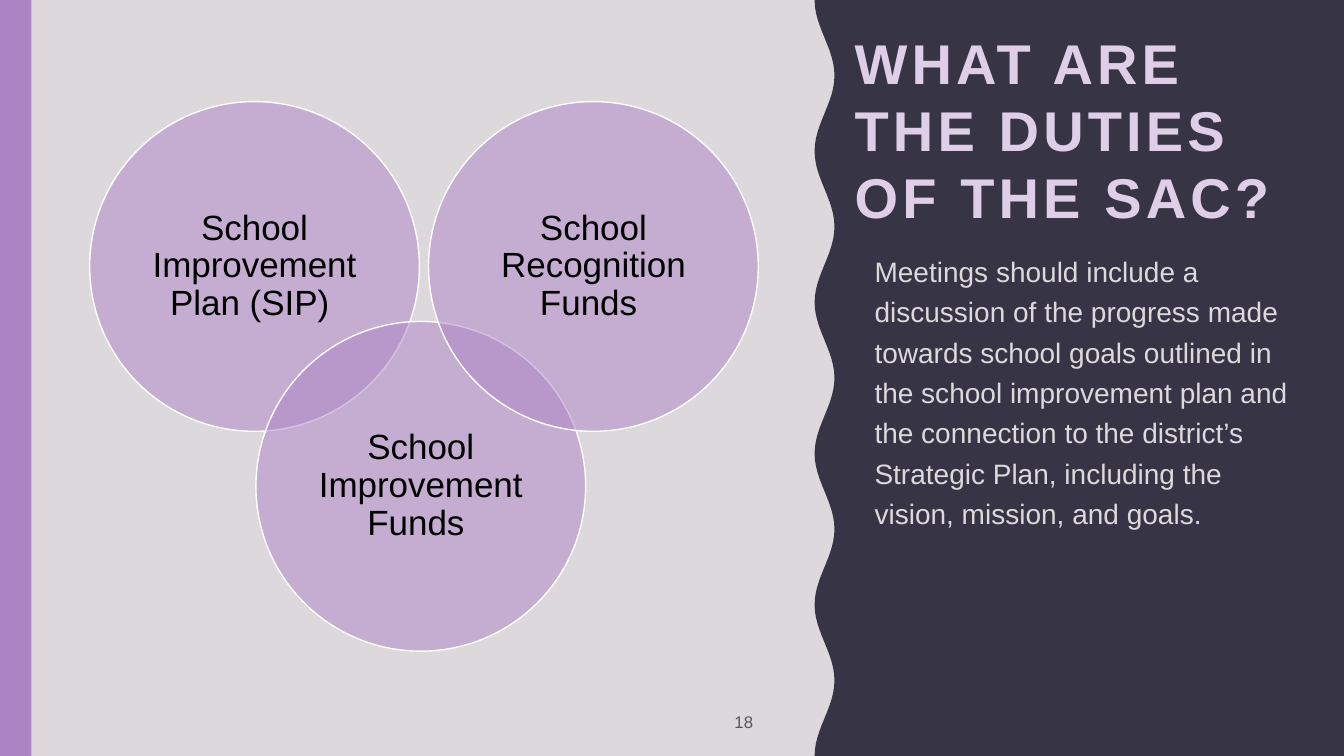
from math import cos, pi

from lxml import etree
from pptx import Presentation
from pptx.dml.color import RGBColor
from pptx.enum.shapes import MSO_SHAPE
from pptx.enum.text import MSO_ANCHOR, PP_ALIGN
from pptx.oxml.ns import qn
from pptx.util import Cm, Pt

RECT, OVAL = MSO_SHAPE.RECTANGLE, MSO_SHAPE.OVAL
TOP, MID, LOW = MSO_ANCHOR.TOP, MSO_ANCHOR.MIDDLE, MSO_ANCHOR.BOTTOM
LEFT, MIDST, RIGHT = PP_ALIGN.LEFT, PP_ALIGN.CENTER, PP_ALIGN.RIGHT

WIDE, HIGH = 33.87, 19.05
PALE, DARK, LILAC, WHITE = "DCD8DC", "373545", "AD84C6", "FFFFFF"


def tint(code):
    return RGBColor.from_string(code)


class Deck:
    font = "Arial"

    def __init__(self):
        self.show = Presentation()
        self.show.slide_width, self.show.slide_height = Cm(WIDE), Cm(HIGH)
        self.slide = self.show.slides.add_slide(self.show.slide_layouts[6])
        fill = self.slide.background.fill
        fill.solid()
        fill.fore_color.rgb = tint(PALE)

    def paint(self, shape, color, alpha=100, edge=None):
        shape.shadow.inherit = False
        shape.fill.solid()
        shape.fill.fore_color.rgb = tint(color)
        if alpha < 100:
            node = shape.fill._xPr.find(".//" + qn("a:srgbClr"))
            etree.SubElement(node, qn("a:alpha"), val=str(alpha * 1000))
        if edge:
            shape.line.color.rgb = tint(edge)
            shape.line.width = Pt(1)
        else:
            shape.line.fill.background()

    def shape(self, kind, x, y, w, h, color, **look):
        item = self.slide.shapes.add_shape(kind, Cm(x), Cm(y), Cm(w), Cm(h))
        self.paint(item, color, **look)

    def wave(self, mid, swing, period, color):
        """Fill the slide from a wavy left edge to its right side."""
        steps = 120
        edge = []
        for i in range(steps + 1):
            y = HIGH * (1 - i / steps)
            x = mid - swing * cos(2 * pi * y / period)
            edge.append((Cm(x), Cm(y)))
        path = self.slide.shapes.build_freeform(Cm(WIDE), Cm(0))
        path.add_line_segments([(Cm(WIDE), Cm(HIGH))] + edge, close=True)
        self.paint(path.convert_to_shape(), color)

    def text(self, x, y, w, h, words, size, color, align=LEFT, anchor=TOP,
             bold=False, track=0, lines=1.0, before=0, after=0, inset=None):
        box = self.slide.shapes.add_textbox(Cm(x), Cm(y), Cm(w), Cm(h))
        frame = box.text_frame
        frame.word_wrap = True
        frame.vertical_anchor = anchor
        if inset is not None:
            frame.margin_top = frame.margin_bottom = Cm(inset)
            frame.margin_left = frame.margin_right = Cm(inset)
        para = frame.paragraphs[0]
        para.alignment, para.line_spacing = align, lines
        para.space_before, para.space_after = Pt(before), Pt(after)
        run = para.add_run()
        run.text = words
        font = run.font
        font.name, font.size, font.bold = self.font, Pt(size), bold
        font.color.rgb = tint(color)
        if track:
            run._r.get_or_add_rPr().set("spc", str(track * 100))


def main():
    deck = Deck()
    deck.wave(20.78, 0.25, HIGH / 5, DARK)
    deck.shape(RECT, 0, 0, 0.79, HIGH, LILAC)
    deck.text(21.29, 1.27, 12.19, 4.65, "WHAT ARE THE DUTIES OF THE SAC?", 40,
              "DECEE8", anchor=LOW, bold=True, track=3)

    size, pad = 8.31, 1.22
    duties = [
        (2.26, 2.56, "School Improvement Plan (SIP) "),
        (6.45, 8.1, "School Improvement Funds "),
        (10.8, 2.56, "School Recognition Funds "),
    ]
    for x, y, duty in duties:
        deck.shape(OVAL, x, y, size, size, LILAC, alpha=50, edge=WHITE)
        deck.text(x + pad, y + pad, size - 2 * pad, size - 2 * pad, duty, 25,
                  "000000", MIDST, MID, lines=0.9, after=8.75, inset=0.25)

    deck.text(21.79, 6.12, 11.23, 10.29,
              "Meetings should include a discussion of the progress made "
              "towards school goals outlined in the school improvement plan "
              "and the connection to the district’s Strategic Plan, including "
              "the vision, mission, and goals.",
              20, PALE, lines=1.2, before=12)
    deck.text(15.8, 17.7, 3.43, 0.97, "18", 12, "595959", RIGHT, MID)
    deck.show.save("out.pptx")


if __name__ == "__main__":
    main()
